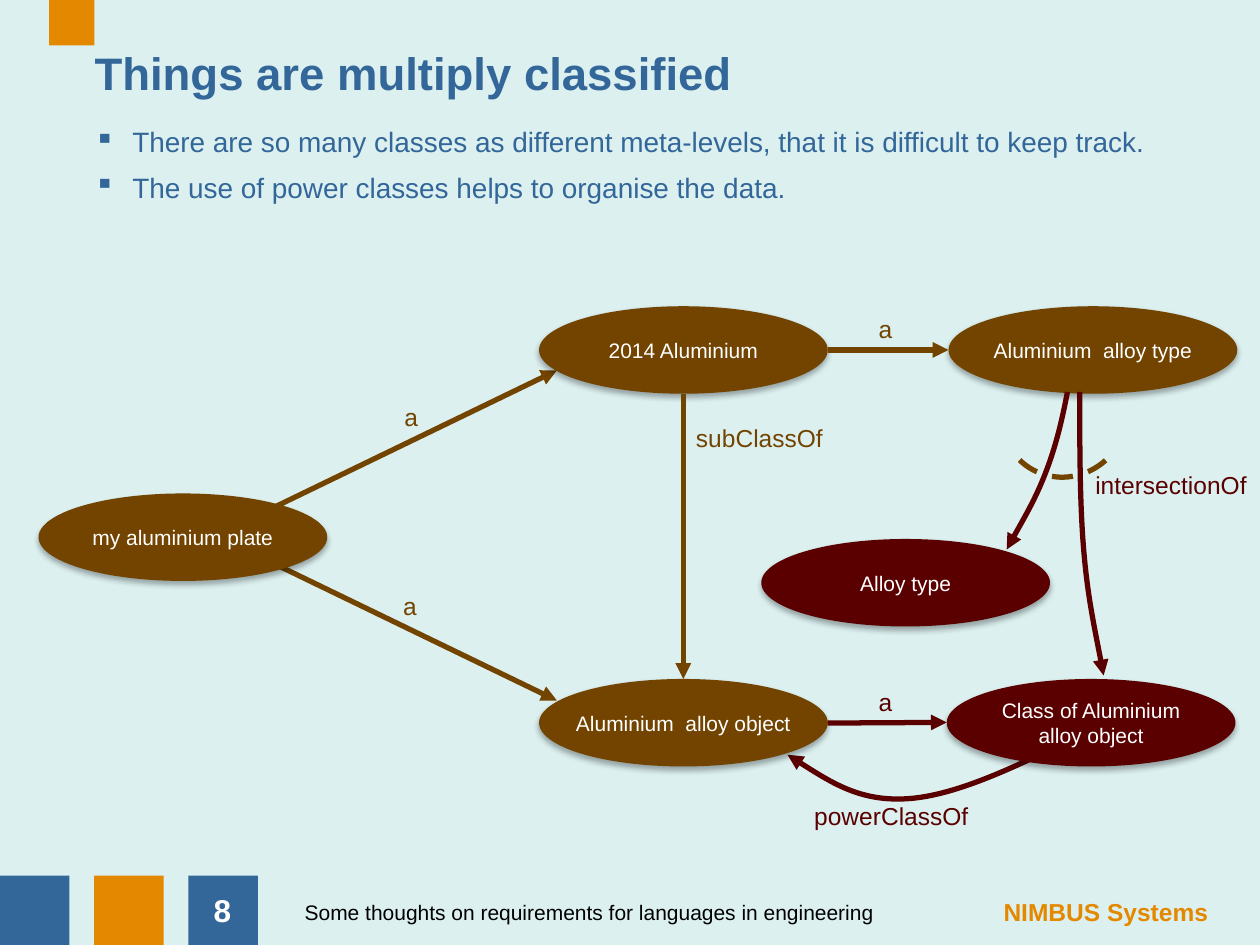
from dataclasses import dataclass

from lxml.etree import SubElement
from pptx import Presentation
from pptx.dml.color import RGBColor
from pptx.enum.dml import MSO_LINE_DASH_STYLE as Dash
from pptx.enum.shapes import MSO_CONNECTOR as Connector, MSO_SHAPE as Preset
from pptx.enum.text import MSO_ANCHOR as Anchor, MSO_AUTO_SIZE as AutoSize, PP_ALIGN as Align
from pptx.oxml.ns import qn
from pptx.util import Pt


@dataclass(frozen=True)
class Theme:
    font: str = "Arial"
    background: str = "DCF0F0"
    blue: str = "336699"
    orange: str = "E48800"
    brown: str = "724400"
    maroon: str = "5A0000"
    black: str = "000000"
    white: str = "FFFFFF"
    title: int = 26
    number: int = 18
    body: int = 16
    label: int = 14
    node: int = 12
    stroke: int = 3


def rgb(value):
    return RGBColor.from_string(value)


def set_all(target, values):
    for name, value in values.items():
        setattr(target, name, value)


class DiagramSlide:
    NODE_WIDTH, NODE_HEIGHT = 165, 50

    def __init__(self, deck, theme):
        self.theme = theme
        self.slide = deck.slides.add_slide(deck.slide_layouts[5])
        self.shapes = self.slide.shapes
        fill = self.slide.background.fill
        fill.solid()
        fill.fore_color.rgb = rgb(theme.background)

    def put_lines(self, frame, lines, size, color, bold=False, align=Align.LEFT, **frame_format):
        set_all(frame, {"word_wrap": True, **frame_format})
        for index, line in enumerate(lines):
            paragraph = frame.paragraphs[0] if index == 0 else frame.add_paragraph()
            paragraph.alignment = align
            run = paragraph.add_run()
            run.text = line
            set_all(run.font, {"name": self.theme.font, "size": Pt(size), "bold": bold})
            run.font.color.rgb = rgb(color)

    def no_insets(self, frame):
        set_all(frame, {f"margin_{side}": 0 for side in ("left", "top", "right", "bottom")})

    def title(self, text, left, top, width, height):
        holder = self.shapes.title
        set_all(holder, {"left": Pt(left), "top": Pt(top), "width": Pt(width), "height": Pt(height)})
        self.no_insets(holder.text_frame)
        self.put_lines(holder.text_frame, [text], self.theme.title, self.theme.blue, True,
                       vertical_anchor=Anchor.TOP, auto_size=AutoSize.NONE)

    def text(self, text, left, top, width, height, size, color, **style):
        box = self.shapes.add_textbox(Pt(left), Pt(top), Pt(width), Pt(height))
        self.put_lines(box.text_frame, [text], size, color, **style)

    def bullets(self, lines, left, top, width, height):
        frame = self.shapes.add_textbox(Pt(left), Pt(top), Pt(width), Pt(height)).text_frame
        self.no_insets(frame)
        self.put_lines(frame, lines, self.theme.body, self.theme.blue)
        for paragraph in frame.paragraphs:
            paragraph.space_before = Pt(7)
            properties = paragraph._p.get_or_add_pPr()
            properties.set("marL", str(Pt(21.6)))
            properties.set("indent", str(-Pt(21.6)))
            SubElement(properties, qn("a:buChar"), char="▪")

    def filled(self, preset, left, top, width, height, color):
        shape = self.shapes.add_shape(preset, Pt(left), Pt(top), Pt(width), Pt(height))
        shape.shadow.inherit = False
        shape.fill.solid()
        shape.fill.fore_color.rgb = rgb(color)
        shape.line.fill.background()
        return shape

    def square(self, left, top, side, color):
        self.filled(Preset.RECTANGLE, left, top, side, side, color)

    def node(self, lines, left, top, color):
        oval = self.filled(Preset.OVAL, left, top, self.NODE_WIDTH, self.NODE_HEIGHT, color)
        effects = oval._element.spPr.find(qn("a:effectLst"))
        shadow = SubElement(effects, qn("a:outerShdw"), blurRad=str(Pt(3.5)), dist=str(Pt(2.2)),
                            dir="5400000", rotWithShape="0")
        shade = SubElement(shadow, qn("a:srgbClr"), val=self.theme.black)
        SubElement(shade, qn("a:alpha"), val="32000")
        self.put_lines(oval.text_frame, lines, self.theme.node, self.theme.white,
                       align=Align.CENTER, word_wrap=False, vertical_anchor=Anchor.MIDDLE)

    def label(self, text, center, top, width, color):
        self.text(text, center - width / 2, top, width, 24.3, self.theme.label, color,
                  align=Align.CENTER, auto_size=AutoSize.SHAPE_TO_FIT_TEXT)

    def stroke(self, line, color):
        line.color.rgb = rgb(color)
        line.width = Pt(self.theme.stroke)

    def arrowhead(self, line):
        SubElement(line._get_or_add_ln(), qn("a:tailEnd"), type="triangle")

    def arrow(self, start, end, color):
        link = self.shapes.add_connector(Connector.STRAIGHT, *map(Pt, (*start, *end)))
        self.stroke(link.line, color)
        self.arrowhead(link.line)
        SubElement(link._element.spPr, qn("a:effectLst"))

    def curved_arrow(self, start, *points, color):
        """Each three points are two control points and the end of a cubic curve."""
        builder = self.shapes.build_freeform(Pt(start[0]), Pt(start[1]))
        builder.add_line_segments([(Pt(x), Pt(y)) for x, y in points], close=False)
        curve = builder.convert_to_shape()
        outline = next(curve._element.iter(qn("a:path")))
        segments = outline.findall(qn("a:lnTo"))
        for first in range(0, len(segments), 3):
            bezier = SubElement(outline, qn("a:cubicBezTo"))
            for segment in segments[first:first + 3]:
                bezier.append(segment[0])
                outline.remove(segment)
        curve.shadow.inherit = False
        curve.fill.background()
        self.stroke(curve.line, color)
        self.arrowhead(curve.line)

    def dashed_arc(self, left, top, width, height, rotation, color):
        arc = self.shapes.add_shape(Preset.ARC, Pt(left), Pt(top), Pt(width), Pt(height))
        arc.shadow.inherit = False
        arc.fill.background()
        arc.rotation = rotation
        arc._element.spPr.xfrm.set("flipV", "1")
        self.stroke(arc.line, color)
        arc.line.dash_style = Dash.DASH


def main():
    deck = Presentation()
    set_all(deck, {"slide_width": Pt(720), "slide_height": Pt(540)})
    theme = Theme()
    page = DiagramSlide(deck, theme)
    brown, maroon = theme.brown, theme.maroon

    for column, color in enumerate((theme.blue, theme.orange, theme.blue)):
        page.square(column * 53.8, 500.3, 39.7, color)
    page.square(28, 0, 26, theme.orange)
    page.text("NIMBUS Systems", 561.6, 509, 136, 24.3, theme.label, theme.orange, bold=True,
              align=Align.RIGHT, word_wrap=False)
    page.text("Some thoughts on requirements for languages in engineering", 167, 501.3, 431, 39.7,
              theme.node, theme.black, vertical_anchor=Anchor.MIDDLE)
    page.text("8", 101.5, 500.3, 51, 39.7, theme.number, theme.white, bold=True,
              align=Align.CENTER, vertical_anchor=Anchor.MIDDLE)

    page.title("Things are multiply classified", 54, 26, 612, 59)
    page.bullets(["There are so many classes as different meta-levels, that it is difficult to keep track.",
                  "The use of power classes helps to organise the data."], 54, 71.3, 640, 79)

    page.curved_arrow((612, 422.6), (578.2, 439.2), (545, 455), (517.7, 456.5),
                      (491, 457.9), (470.2, 444.2), (450, 431.3), color=maroon)
    page.arrow((113, 311), (318.2, 211.7), brown)
    page.arrow((113, 301), (318.2, 400.3), brown)

    upper, lower = 175, 388
    for lines, left, top, color in (
        (["my aluminium plate"], 22, 282, brown),
        (["2014 Aluminium"], 308, upper, brown),
        (["Aluminium  alloy type"], 542, upper, brown),
        (["Alloy type"], 435, 308, maroon),
        (["Aluminium  alloy object"], 308, lower, brown),
        (["Class of Aluminium", "alloy object"], 541, lower, maroon),
    ):
        page.node(lines, left, top, color)

    page.arrow((473, 200), (542, 200), brown)
    page.arrow((473, 413.2), (541, 412.8), maroon)
    page.arrow((390.5, 225), (390.5, 388), brown)
    page.dashed_arc(573, 200, 70.6, 73.4, 44.4, brown)
    page.curved_arrow((610, 224), (607, 239.8), (603.4, 255), (597.6, 270),
                      (591.8, 285), (583.2, 299.5), (575.3, 314), color=maroon)
    page.curved_arrow((617, 224), (617, 255), (617, 286.6), (619.2, 313.2),
                      (621.4, 340.6), (626.4, 362.9), (630.7, 386), color=maroon)

    for text, center, top, width, color in (
        ("a", 235, 226, 27, brown),
        ("a", 234.3, 334, 27, brown),
        ("a", 506, 175.7, 27, brown),
        ("a", 506, 388.8, 27, maroon),
        ("subClassOf", 434, 238.3, 114, brown),
        ("powerClassOf", 509.4, 454.3, 210, maroon),
        ("intersectionOf", 669.2, 265, 101, maroon),
    ):
        page.label(text, center, top, width, color)

    deck.save("out.pptx")


if __name__ == "__main__":
    main()
